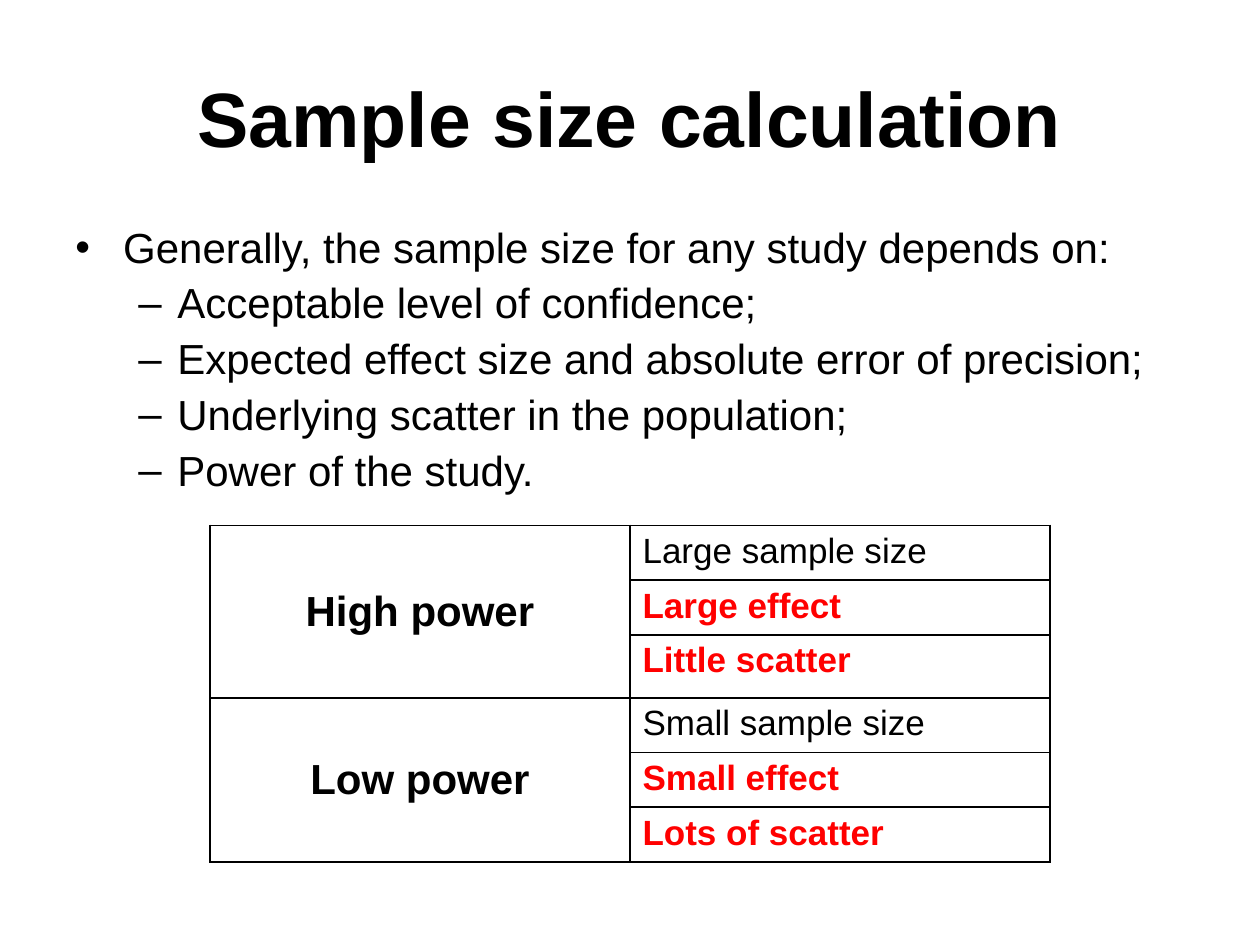
from lxml.etree import SubElement
from pptx import Presentation
from pptx.dml.color import RGBColor
from pptx.enum.text import MSO_ANCHOR as Anchor, PP_ALIGN as Align
from pptx.oxml.ns import qn
from pptx.util import Inches, Pt

TITLE = "Sample size calculation"
BULLETS = [
    (0, "Generally, the sample size for any study depends on:"),
    (1, "Acceptable level of confidence;"),
    (1, "Expected effect size and absolute error of precision;"),
    (1, "Underlying scatter in the population;"),
    (1, "Power of the study."),
]
LEVELS = [("•", 0.38, -0.38), ("–", 0.81, -0.31)]
GROUPS = [
    ("High power", ["Large sample size", "Large effect", "Little scatter"]),
    ("Low power", ["Small sample size", "Small effect", "Lots of scatter"]),
]
ROW_HEIGHTS = [0.43, 0.43, 0.47, 0.43, 0.43, 0.43]

BLACK = RGBColor(0, 0, 0)
RED = RGBColor(0xFF, 0, 0)
FONT = "Arial"
WIDTH, HEIGHT = 10, 7.5
MARGIN = WIDTH / 20
TABLE_WIDTH = WIDTH * 2 / 3


def add_text(p, text, size, bold=False, color=BLACK):
    r = p.add_run()
    r.text = text
    r.font.name = FONT
    r.font.size = Pt(size)
    r.font.bold = bold
    r.font.color.rgb = color


def set_bullet(p, level):
    char, margin, indent = LEVELS[level]
    p.level = level
    pPr = p._p.get_or_add_pPr()
    pPr.set("marL", str(Inches(margin)))
    pPr.set("indent", str(Inches(indent)))
    SubElement(pPr, qn("a:buFont"), typeface=FONT)
    SubElement(pPr, qn("a:buChar"), char=char)


def style_cell(cell):
    tcPr = cell._tc.get_or_add_tcPr()
    for side in ("lnL", "lnR", "lnT", "lnB"):
        ln = SubElement(tcPr, qn(f"a:{side}"), w=str(Pt(1)))
        fill = SubElement(ln, qn("a:solidFill"))
        SubElement(fill, qn("a:srgbClr"), val=str(BLACK))
    cell.fill.background()


prs = Presentation()
prs.slide_width, prs.slide_height = Inches(WIDTH), Inches(HEIGHT)
s = prs.slides.add_slide(prs.slide_layouts[5])

title = s.shapes.title
title.left, title.top = Inches(MARGIN), Inches(0.3)
title.width, title.height = Inches(WIDTH - 2 * MARGIN), Inches(1.25)
title.text_frame.vertical_anchor = Anchor.MIDDLE
p = title.text_frame.paragraphs[0]
p.alignment = Align.CENTER
add_text(p, TITLE, 44, bold=True)

body = s.shapes.add_textbox(Inches(MARGIN), Inches(1.75),
                            Inches(WIDTH - 2 * MARGIN), Inches(4.95))
tf = body.text_frame
tf.word_wrap = True
for i, (level, text) in enumerate(BULLETS):
    p = tf.add_paragraph() if i else tf.paragraphs[0]
    p.line_spacing = 0.9
    p.space_before = Pt(6)
    set_bullet(p, level)
    add_text(p, text, 24)

frame = s.shapes.add_table(len(ROW_HEIGHTS), 2,
                           Inches((WIDTH - TABLE_WIDTH) / 2), Inches(4.17),
                           Inches(TABLE_WIDTH), Inches(sum(ROW_HEIGHTS)))
table = frame.table
table.first_row = table.horz_banding = False
for row, height in zip(table.rows, ROW_HEIGHTS):
    row.height = Inches(height)
for cell in table.iter_cells():
    style_cell(cell)

for g, (power, factors) in enumerate(GROUPS):
    top = g * len(factors)
    head = table.cell(top, 0)
    head.merge(table.cell(top + len(factors) - 1, 0))
    head.vertical_anchor = Anchor.MIDDLE
    p = head.text_frame.paragraphs[0]
    p.alignment = Align.CENTER
    add_text(p, power, 24, bold=True)
    for i, factor in enumerate(factors):
        p = table.cell(top + i, 1).text_frame.paragraphs[0]
        add_text(p, factor, 20, bold=i > 0, color=RED if i else BLACK)

prs.save("out.pptx")
